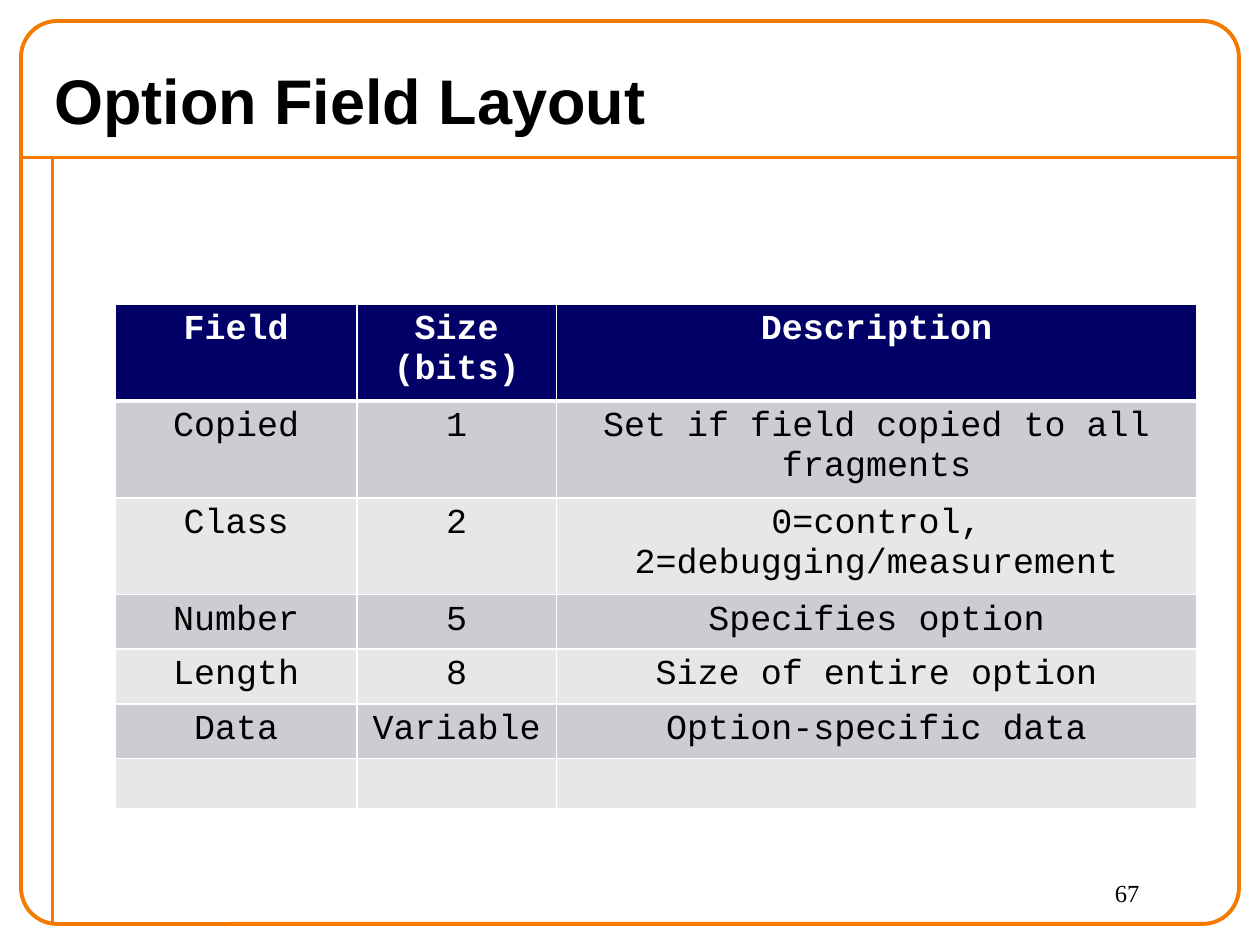
import lxml.etree
import pptx
import pptx.dml.color
import pptx.enum.shapes
import pptx.enum.text
import pptx.oxml.ns
import pptx.util

RGBColor = pptx.dml.color.RGBColor
ORANGE = RGBColor(0xF4, 0x7A, 0x00)
NAVY = RGBColor(0x00, 0x00, 0x66)
BLACK = RGBColor(0x00, 0x00, 0x00)
WHITE = RGBColor(0xFF, 0xFF, 0xFF)
BANDS = (RGBColor(0xE7, 0xE7, 0xEA), RGBColor(0xCC, 0xCC, 0xD3))

UNIT = pptx.util.Inches(1) // 12
SLIDE_BOX = (0, 0, 120, 90)
FRAME_BOX = (2, 2, 116, 86)
TITLE_BOX = (4, 5, 114, 9)
NUMBER_BOX = (105, 83, 12, 5)
TABLE_BOX = (11, 29, 103, 33.6)
COLUMN_UNITS = (23, 19, 61)
ROWS = (
    ("Field", "Size (bits)", "Description"),
    ("Copied", "1", "Set if field copied to all fragments"),
    ("Class", "2", "0=control, 2=debugging/measurement"),
    ("Number", "5", "Specifies option"),
    ("Length", "8", "Size of entire option"),
    ("Data", "Variable", "Option-specific data"),
    ("", "", ""),
)


def grid(*units):
    """Convert grid units to slide lengths."""
    return [round(unit * UNIT) for unit in units]


def style_text(frame, font_name, size, color, bold=False):
    """Format every run of a text frame."""
    for para in frame.paragraphs:
        for span in para.runs:
            span.font.name = font_name
            span.font.size = pptx.util.Pt(size)
            span.font.bold = bold
            span.font.color.rgb = color


def add_rule(page, start, end):
    """Draw an orange rule between two grid points."""
    rule = page.shapes.add_connector(
        pptx.enum.shapes.MSO_CONNECTOR.STRAIGHT, *grid(*start, *end)
    )
    rule.line.color.rgb = ORANGE
    rule.line.width = pptx.util.Pt(2.25)
    properties = rule._element.spPr
    lxml.etree.SubElement(properties, pptx.oxml.ns.qn("a:effectLst"))


def add_frame(page, box):
    """Draw the rounded border with its header and margin rules."""
    left, top, width, height = box
    header = top + 13
    margin = left + 3
    add_rule(page, (left, header), (left + width, header))
    add_rule(page, (margin, header), (margin, top + height))
    border = page.shapes.add_shape(
        pptx.enum.shapes.MSO_SHAPE.ROUNDED_RECTANGLE, *grid(*box)
    )
    border.adjustments[0] = 0.04
    border.shadow.inherit = False
    border.fill.background()
    border.line.color.rgb = ORANGE
    border.line.width = pptx.util.Pt(2.25)


def add_label(page, box, text, font_name, size, bold, anchor):
    """Place one wrapped line of black text in its box."""
    label = page.shapes.add_textbox(*grid(*box))
    frame = label.text_frame
    frame.word_wrap = True
    frame.vertical_anchor = anchor
    frame.text = text
    style_text(frame, font_name, size, BLACK, bold)


def set_borders(cell, bottom_width):
    """Give a cell white borders with the stated bottom width."""
    properties = cell._tc.get_or_add_tcPr()
    widths = {"lnL": 1, "lnR": 1, "lnT": 1, "lnB": bottom_width}
    for index, (side, width) in enumerate(widths.items()):
        line = lxml.etree.Element(
            pptx.oxml.ns.qn(f"a:{side}"), w=str(pptx.util.Pt(width))
        )
        fill = lxml.etree.SubElement(line, pptx.oxml.ns.qn("a:solidFill"))
        lxml.etree.SubElement(fill, pptx.oxml.ns.qn("a:srgbClr"), val=str(WHITE))
        properties.insert(index, line)


def add_field_table(page, box):
    """Fill the box with the table of option fields."""
    table = page.shapes.add_table(len(ROWS), len(COLUMN_UNITS), *grid(*box)).table
    for column, share in zip(table.columns, COLUMN_UNITS):
        column.width = round(box[2] * UNIT * share / sum(COLUMN_UNITS))
    for row_index, texts in enumerate(ROWS):
        header = row_index == 0
        for column_index, text in enumerate(texts):
            cell = table.cell(row_index, column_index)
            cell.fill.solid()
            cell.fill.fore_color.rgb = NAVY if header else BANDS[row_index % 2]
            set_borders(cell, 3 if header else 1)
            if text:
                cell.text_frame.text = text
                cell.text_frame.paragraphs[0].alignment = (
                    pptx.enum.text.PP_ALIGN.CENTER
                )
                style_text(
                    cell.text_frame, "Courier New", 20,
                    WHITE if header else BLACK, header,
                )


def main():
    """Build and save the slide."""
    deck = pptx.Presentation()
    deck.slide_width, deck.slide_height = grid(*SLIDE_BOX[2:])
    page = deck.slides.add_slide(deck.slide_layouts[6])
    anchors = pptx.enum.text.MSO_ANCHOR
    add_frame(page, FRAME_BOX)
    add_label(
        page, TITLE_BOX, "Option Field Layout", "Arial", 36, True, anchors.MIDDLE
    )
    add_label(page, NUMBER_BOX, "67", "Times New Roman", 14, False, anchors.TOP)
    add_field_table(page, TABLE_BOX)
    deck.save("out.pptx")


if __name__ == "__main__":
    main()
